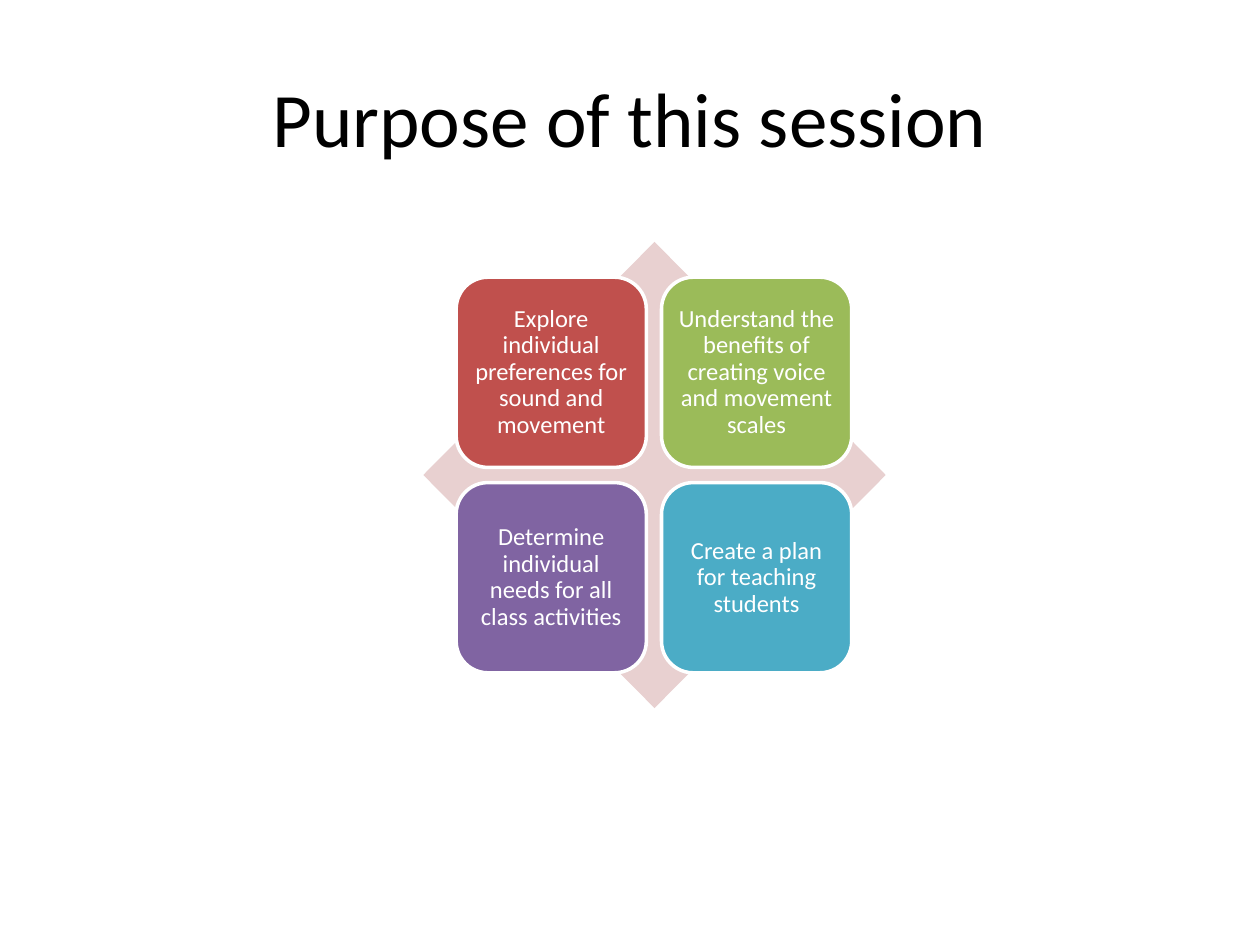
from dataclasses import dataclass

from pptx import Presentation
from pptx.dml.color import RGBColor
from pptx.enum.shapes import MSO_SHAPE
from pptx.enum.text import MSO_ANCHOR, PP_ALIGN
from pptx.util import Inches, Pt

DIAMOND = MSO_SHAPE.DIAMOND
ROUNDED = MSO_SHAPE.ROUNDED_RECTANGLE
MIDDLE = MSO_ANCHOR.MIDDLE
CENTER = PP_ALIGN.CENTER
TITLE_ONLY = 5


@dataclass(frozen=True)
class Theme:
    font: str = "Calibri"
    title_size: int = 44
    card_size: int = 14
    ink: str = "000000"
    white: str = "FFFFFF"
    diamond: str = "E8D0D0"


THEME = Theme()

# Purposes in reading order, each with its card colour
PURPOSES = [
    ("Explore individual preferences for sound and movement", "C0504D"),
    ("Understand the benefits of creating voice and movement scales", "9BBB59"),
    ("Determine individual needs for all class activities", "8064A2"),
    ("Create a plan for teaching students", "4BACC6"),
]

# Card grid, in inches
GRID_LEFT, GRID_TOP = 3.62, 2.2
CARD_SIZE, CARD_PITCH = 1.51, 1.63
CARD_INSET = 0.06
COLUMNS = 2


def set_text(frame, text, size, color):
    frame.text = text
    frame.word_wrap = True
    frame.vertical_anchor = MIDDLE
    para = frame.paragraphs[0]
    para.alignment = CENTER
    font = para.runs[0].font
    font.name = THEME.font
    font.size = Pt(size)
    font.color.rgb = RGBColor.from_string(color)
    return para


def add_title(page, text):
    title = page.shapes.title
    title.left, title.top = Inches(0.5), Inches(0.3)
    title.width, title.height = Inches(9), Inches(1.25)
    set_text(title.text_frame, text, THEME.title_size, THEME.ink)


def add_filled_shape(page, kind, left, top, width, height, color):
    shape = page.shapes.add_shape(
        kind, Inches(left), Inches(top), Inches(width), Inches(height))
    shape.shadow.inherit = False
    shape.fill.solid()
    shape.fill.fore_color.rgb = RGBColor.from_string(color)
    shape.line.fill.background()
    return shape


def add_card(page, left, top, text, color):
    card = add_filled_shape(page, ROUNDED, left, top, CARD_SIZE, CARD_SIZE, color)
    card.line.color.rgb = RGBColor.from_string(THEME.white)
    card.line.width = Pt(2)
    frame = card.text_frame
    frame.margin_left = frame.margin_right = Inches(CARD_INSET)
    frame.margin_top = frame.margin_bottom = Inches(CARD_INSET)
    para = set_text(frame, text, THEME.card_size, THEME.white)
    para.line_spacing = 0.9


def main():
    deck = Presentation()
    deck.slide_width, deck.slide_height = Inches(10), Inches(7.5)
    page = deck.slides.add_slide(deck.slide_layouts[TITLE_ONLY])

    add_title(page, "Purpose of this session")

    # Diamond behind the matrix
    add_filled_shape(page, DIAMOND, 3.36, 1.92, 3.67, 3.7, THEME.diamond)

    # Two-by-two matrix of purposes
    for index, (text, color) in enumerate(PURPOSES):
        row, column = divmod(index, COLUMNS)
        add_card(page, GRID_LEFT + column * CARD_PITCH,
                 GRID_TOP + row * CARD_PITCH, text, color)

    deck.save("out.pptx")


if __name__ == "__main__":
    main()
